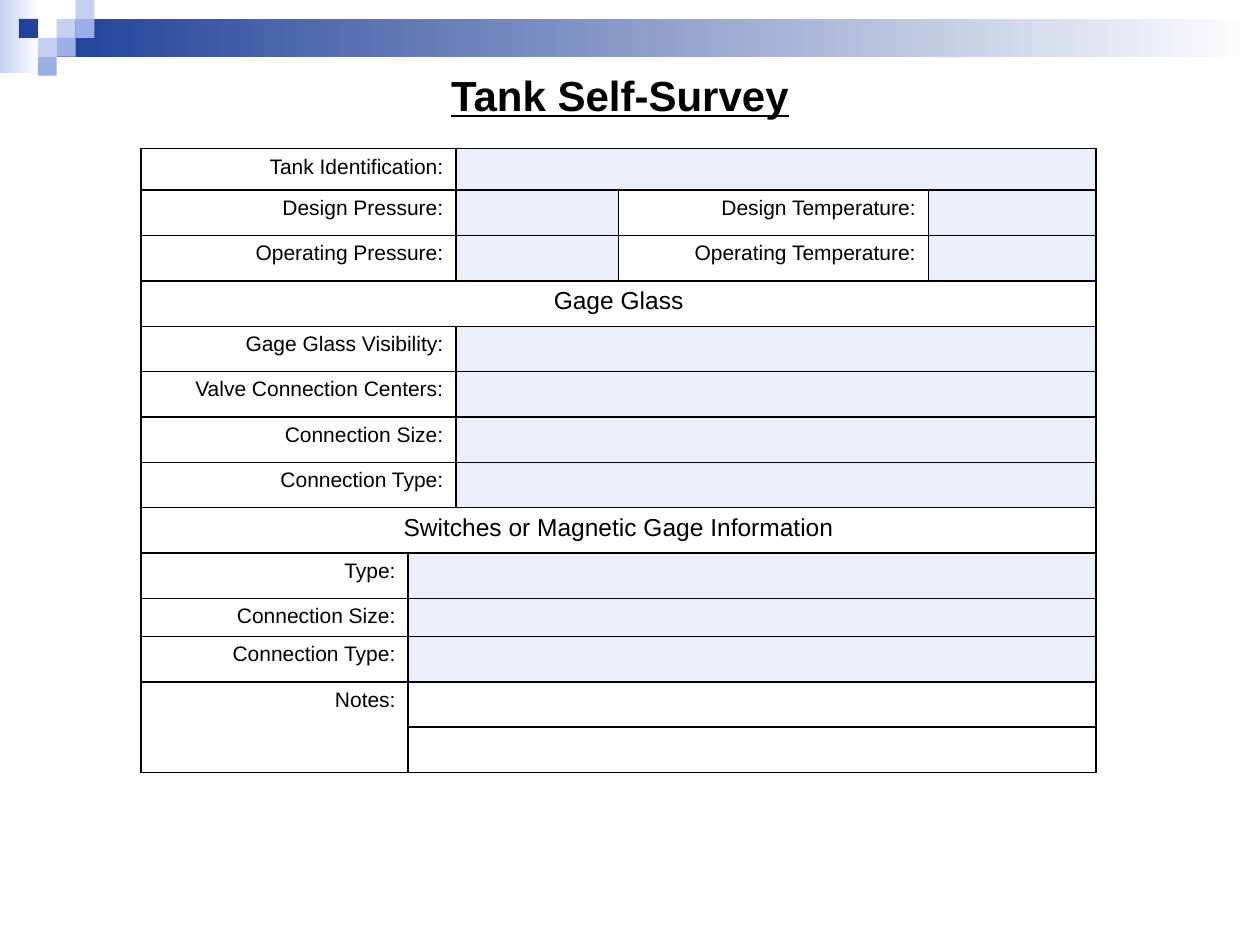
from dataclasses import dataclass
from typing import Any

from lxml import etree
from pptx import Presentation
from pptx.dml.color import RGBColor
from pptx.enum import shapes, text
from pptx.oxml import ns
from pptx.util import Inches, Pt

LABEL, VALUE, HEADING, NOTE = "label", "value", "heading", "note"

WIDTHS = [2.12, 0.38, 1.29, 2.46, 1.33]
ROW_HEIGHT = 0.36
SPECIAL_HEIGHTS = {0: 0.33, 10: 0.29}


def color(hex_string):
    return RGBColor.from_string(hex_string)


def wide_row(label):
    return [(LABEL, label, 2), (VALUE, "", 3)]


def paired_row(left, right):
    return [(LABEL, left, 2), (VALUE, "", 1), (LABEL, right, 1), (VALUE, "", 1)]


def heading_row(heading):
    return [(HEADING, heading, 5)]


def narrow_row(label, kind=VALUE):
    return [(LABEL, label, 1), (kind, "", 4)]


ROWS = [
    wide_row("Tank Identification:"),
    paired_row("Design Pressure:", "Design Temperature:"),
    paired_row("Operating Pressure:", "Operating Temperature:"),
    heading_row("Gage Glass"),
    wide_row("Gage Glass Visibility:"),
    wide_row("Valve Connection Centers:"),
    wide_row("Connection Size:"),
    wide_row("Connection Type:"),
    heading_row("Switches or Magnetic Gage Information"),
    narrow_row("Type:"),
    narrow_row("Connection Size:"),
    narrow_row("Connection Type:"),
    narrow_row("Notes:", NOTE),
    narrow_row("", NOTE),
]


@dataclass
class SurveySlide:
    slide: Any
    font: str = "Arial"
    ink: str = "000000"
    paper: str = "FFFFFF"
    field: str = "EBEFFA"
    dark: str = "224299"
    medium: str = "9CB0E7"
    light: str = "C4D1F2"

    def rectangle(self, left, top, width, height, fill, fade_to=None):
        shape = self.slide.shapes.add_shape(
            shapes.MSO_SHAPE.RECTANGLE,
            Inches(left), Inches(top), Inches(width), Inches(height))
        shape.shadow.inherit = False
        shape.line.fill.background()
        if fade_to:
            shape.fill.gradient()
            shape.fill.gradient_angle = 0
            for stop, shade in zip(shape.fill.gradient_stops, (fill, fade_to)):
                stop.color.rgb = color(shade)
        else:
            shape.fill.solid()
            shape.fill.fore_color.rgb = color(fill)

    def style_run(self, run, size):
        run.font.name = self.font
        run.font.size = Pt(size)
        run.font.color.rgb = color(self.ink)

    def title(self, wording, left, top, width, height):
        frame = self.slide.shapes.add_textbox(
            Inches(left), Inches(top), Inches(width), Inches(height)).text_frame
        frame.word_wrap = True
        frame.text = wording
        paragraph = frame.paragraphs[0]
        paragraph.alignment = text.PP_ALIGN.CENTER
        run = paragraph.runs[0]
        self.style_run(run, 24)
        run.font.bold = run.font.underline = True

    def borders(self, cell, hidden=""):
        """Rule the cell's four sides, except those named in hidden."""
        properties = cell._tc.get_or_add_tcPr()
        for side in "LRTB":
            line = etree.SubElement(properties, ns.qn(f"a:ln{side}"), w=str(Pt(1)))
            if side in hidden:
                etree.SubElement(line, ns.qn("a:noFill"))
            else:
                fill = etree.SubElement(line, ns.qn("a:solidFill"))
                etree.SubElement(fill, ns.qn("a:srgbClr"), val=self.ink)

    def cell_text(self, cell, kind, wording):
        cell.text = wording
        paragraph = cell.text_frame.paragraphs[0]
        heading = kind == HEADING
        size = 14 if heading else 12
        paragraph.alignment = (
            text.PP_ALIGN.CENTER if heading else text.PP_ALIGN.RIGHT)
        for run in paragraph.runs:
            self.style_run(run, size)
        if not wording:
            # An empty cell takes its line height from the end mark.
            etree.SubElement(paragraph._p, ns.qn("a:endParaRPr"), sz=str(size * 100))

    def form(self, rows, left, top):
        heights = [SPECIAL_HEIGHTS.get(i, ROW_HEIGHT) for i in range(len(rows))]
        table = self.slide.shapes.add_table(
            len(rows), len(WIDTHS), Inches(left), Inches(top),
            Inches(sum(WIDTHS)), Inches(sum(heights))).table
        table.first_row = table.horz_banding = False
        for column, width in zip(table.columns, WIDTHS):
            column.width = Inches(width)
        for i, (row, height) in enumerate(zip(rows, heights)):
            table.rows[i].height = Inches(height)
            start = 0
            for kind, wording, span in row:
                hidden = ""
                if wording == "Notes:":
                    hidden = "B"
                elif kind == LABEL and not wording:
                    hidden = "T"
                for j in range(start, start + span):
                    cell = table.cell(i, j)
                    self.borders(cell, hidden)
                    cell.fill.solid()
                    cell.fill.fore_color.rgb = color(
                        self.field if kind == VALUE else self.paper)
                    self.cell_text(cell, kind, wording if j == start else "")
                if span > 1:
                    table.cell(i, start).merge(table.cell(i, start + span - 1))
                start += span

    def checkers(self, size):
        squares = [
            (3, 1, self.light), (4, 0, self.light), (4, 1, self.medium),
            (2, 2, self.light), (1, 1, self.dark), (3, 2, self.medium),
            (2, 3, self.medium),
        ]
        for column, row, fill in squares:
            self.rectangle(column * size, row * size, size, size, fill)


def main():
    presentation = Presentation()
    presentation.slide_width, presentation.slide_height = Inches(10), Inches(7.5)
    survey = SurveySlide(
        presentation.slides.add_slide(presentation.slide_layouts[6]))
    survey.rectangle(0, 0, 0.31, 0.58, survey.light, survey.paper)
    survey.rectangle(0.45, 0.15, 9.55, 0.3, survey.dark, survey.paper)
    survey.checkers(0.15)
    survey.form(ROWS, 1.12, 1.18)
    survey.title("Tank Self-Survey", 2.71, 0.5, 4.42, 0.5)
    presentation.save("out.pptx")


if __name__ == "__main__":
    main()
